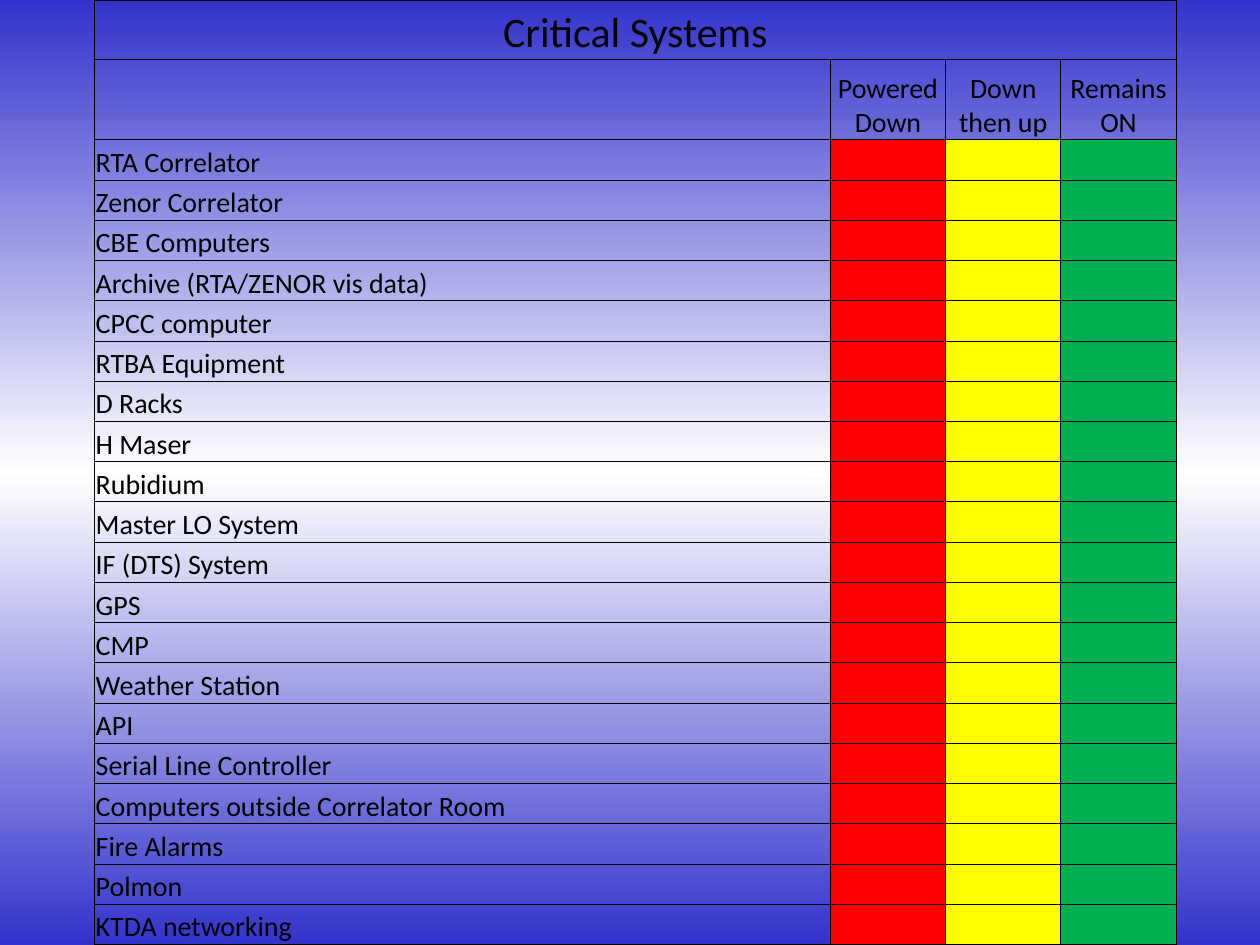
from copy import deepcopy

from lxml.etree import SubElement
from pptx import Presentation
from pptx.dml.color import RGBColor
from pptx.enum.text import MSO_ANCHOR, PP_ALIGN
from pptx.oxml.ns import qn
from pptx.util import Inches, Pt

SYSTEMS = [
    "RTA Correlator", "Zenor Correlator", "CBE Computers",
    "Archive (RTA/ZENOR vis data)", "CPCC computer", "RTBA Equipment",
    "D Racks", "H Maser", "Rubidium", "Master LO System", "IF (DTS) System",
    "GPS", "CMP", "Weather Station", "API", "Serial Line Controller",
    "Computers outside Correlator Room", "Fire Alarms", "Polmon",
    "KTDA networking",
]
STATES = [("Powered\nDown", "FF0000"), ("Down\nthen up", "FFFF00"),
          ("Remains\nON", "00B050")]
TITLE_HEIGHT, HEADER_HEIGHT = 0.47, 0.64
NAME_WIDTH, STATE_WIDTH = 5.84, 0.915


def color(hex_string):
    return RGBColor.from_string(hex_string)


def write(cell, text, size=16, align=PP_ALIGN.CENTER):
    para = cell.text_frame.paragraphs[0]
    para.alignment = align
    for number, line in enumerate(text.split("\n")):
        if number:
            para.add_line_break()
        span = para.add_run()
        span.text = line
        span.font.name = "Calibri"
        span.font.size = Pt(size)
        span.font.color.rgb = color("000000")


deck = Presentation()
deck.slide_width, deck.slide_height = Inches(10), Inches(7.5)
page = deck.slides.add_slide(deck.slide_layouts[6])

# Vertical blue, white, blue background
backdrop = page.background.fill
backdrop.gradient()
backdrop.gradient_angle = 270
stop_list = page.element.xpath(".//a:gsLst")[0]
stop_list.append(deepcopy(stop_list[0]))
for stop, position, shade in zip(backdrop.gradient_stops, (0, 0.5, 1),
                                 ("3333CC", "FFFFFF", "3333CC")):
    stop.position = position
    stop.color.rgb = color(shade)

# Table grid
table = page.shapes.add_table(
    len(SYSTEMS) + 2, len(STATES) + 1, Inches(0.75), 0,
    Inches(NAME_WIDTH + len(STATES) * STATE_WIDTH), deck.slide_height).table
table.first_row = table.horz_banding = False

system_height = (7.5 - TITLE_HEIGHT - HEADER_HEIGHT) / len(SYSTEMS)
heights = [TITLE_HEIGHT, HEADER_HEIGHT] + [system_height] * len(SYSTEMS)
for row, height in zip(table.rows, heights):
    row.height = Inches(height)
for column, width in zip(table.columns, [NAME_WIDTH] + [STATE_WIDTH] * len(STATES)):
    column.width = Inches(width)

for cell in table.iter_cells():
    cell.vertical_anchor = MSO_ANCHOR.BOTTOM
    cell.margin_left = cell.margin_right = cell.margin_top = Inches(0.01)
    cell.margin_bottom = 0
    properties = cell._tc.get_or_add_tcPr()
    for side in ("a:lnL", "a:lnR", "a:lnT", "a:lnB"):
        border = SubElement(properties, qn(side), w=str(Pt(0.5)))
        SubElement(SubElement(border, qn("a:solidFill")), qn("a:srgbClr"), val="000000")
    cell.fill.background()

# Title, state headings and system rows
title = table.cell(0, 0)
title.merge(table.cell(0, len(STATES)))
write(title, "Critical Systems", size=24)

for column, (heading, _) in enumerate(STATES, start=1):
    write(table.cell(1, column), heading)

for row, system in enumerate(SYSTEMS, start=2):
    write(table.cell(row, 0), system, align=PP_ALIGN.LEFT)
    for column, (_, shade) in enumerate(STATES, start=1):
        fill = table.cell(row, column).fill
        fill.solid()
        fill.fore_color.rgb = color(shade)

deck.save("out.pptx")
